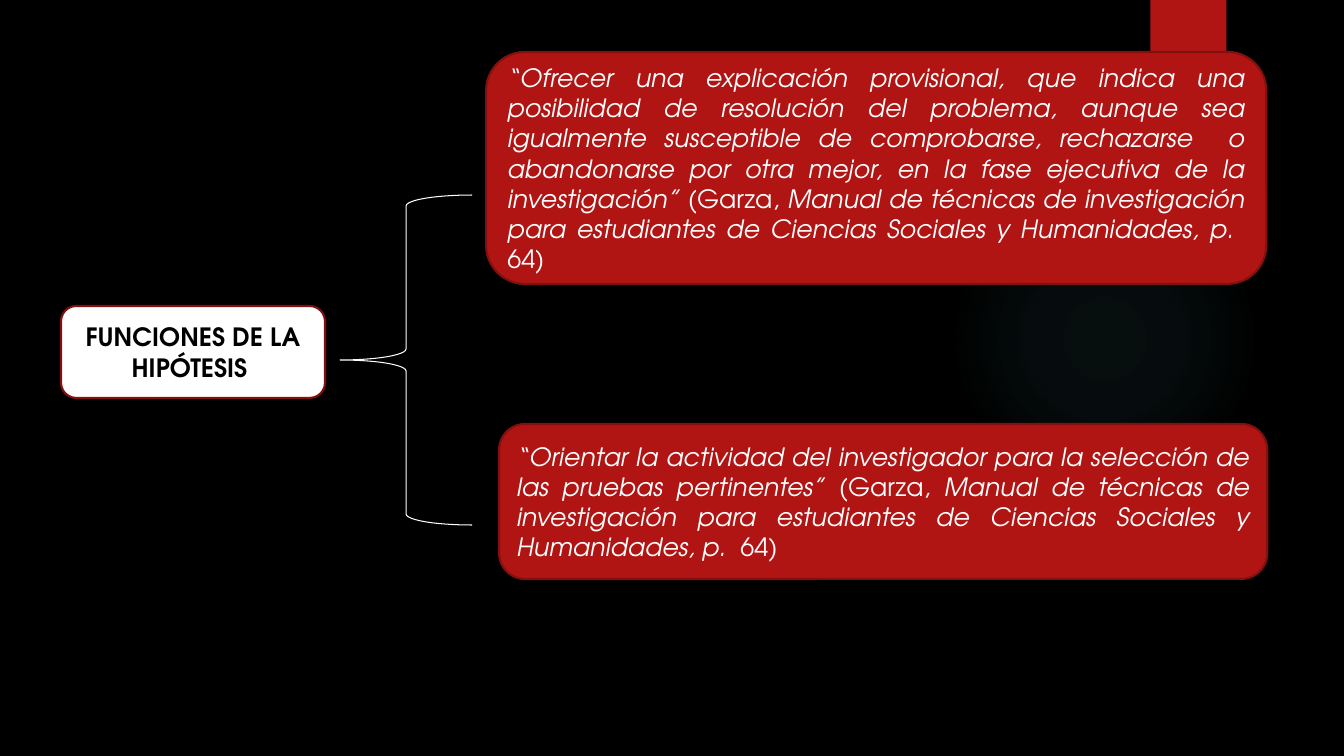
from lxml import etree
from pptx import Presentation
from pptx import util as u
from pptx.dml.color import RGBColor
from pptx.enum import shapes, text
from pptx.oxml import ns

PX = 914400 / 100.8
FONT = "TeX Gyre Adventor"
BLACK, WHITE, RED, DARK_RED, TEAL = "000000", "FFFFFF", "B01513", "82100E", "50B9C1"
KIND = shapes.MSO_SHAPE
ALIGN = text.PP_ALIGN

GLOW_BOX = (949, 184, 310, 310)
GLOW_STOPS = [(0, 7), (36, 6), (69, 0)]
TAB_BOX = (1150, 0, 76, 126)
BRACE_BOX = (340, 195, 132, 330)

MANUAL = "Manual de técnicas de investigación para estudiantes de Ciencias Sociales y Humanidades, p."
TOPIC = ((61, 306, 264, 92), [("FUNCIONES DE LA HIPÓTESIS ", False)])
FUNCTIONS = [
    ((486, 52, 780, 232), [
        ("“Ofrecer una explicación provisional, que indica una posibilidad de resolución del "
         "problema, aunque sea igualmente susceptible de comprobarse, rechazarse  o abandonarse "
         "por otra mejor, en la fase ejecutiva de la investigación” ", True),
        ("(Garza, ", False), (MANUAL, True), ("  64)", False)]),
    ((499, 424, 768, 155), [
        ("“Orientar la actividad del investigador para la selección de las pruebas "
         "pertinentes”", True),
        (" (Garza, ", False), (MANUAL, True), ("  64)", False)]),
]


def rgb(value):
    return RGBColor.from_string(value)


def add_shape(slide, kind, box, fill=None, line=None, width=1.5):
    sp = slide.shapes.add_shape(kind, *(u.Emu(round(v * PX)) for v in box))
    sp.shadow.inherit = False
    if fill:
        sp.fill.solid()
        sp.fill.fore_color.rgb = rgb(fill)
    else:
        sp.fill.background()
    if line:
        sp.line.color.rgb = rgb(line)
        sp.line.width = u.Pt(width)
    else:
        sp.line.fill.background()
    return sp


def add_card(slide, box, runs, fill, color, align, bold=False):
    sp = add_shape(slide, KIND.ROUNDED_RECTANGLE, box, fill, DARK_RED)
    tf = sp.text_frame
    tf.word_wrap = True
    tf.vertical_anchor = text.MSO_ANCHOR.MIDDLE
    p = tf.paragraphs[0]
    p.alignment = align
    for words, italic in runs:
        r = p.add_run()
        r.text = words
        r.font.name = FONT
        r.font.size = u.Pt(18)
        r.font.bold = bold
        r.font.italic = italic
        r.font.color.rgb = rgb(color)


def add_glow(slide):
    sp = add_shape(slide, KIND.OVAL, GLOW_BOX, TEAL)
    stops = "".join(
        f'<a:gs pos="{pos * 1000}"><a:srgbClr val="{TEAL}">'
        f'<a:alpha val="{alpha * 1000}"/></a:srgbClr></a:gs>'
        for pos, alpha in GLOW_STOPS)
    grad = etree.fromstring(
        f'<a:gradFill {ns.nsdecls("a")} rotWithShape="1"><a:gsLst>{stops}</a:gsLst>'
        '<a:path path="circle"><a:fillToRect l="50000" t="50000" r="50000" b="50000"/>'
        '</a:path></a:gradFill>')
    solid = sp._element.spPr.find(ns.qn("a:solidFill"))
    sp._element.spPr.replace(solid, grad)


def main():
    prs = Presentation()
    prs.slide_width, prs.slide_height = u.Inches(13.33), u.Inches(7.5)
    s = prs.slides.add_slide(prs.slide_layouts[6])
    s.background.fill.solid()
    s.background.fill.fore_color.rgb = rgb(BLACK)

    add_glow(s)
    add_shape(s, KIND.RECTANGLE, TAB_BOX, RED)
    add_card(s, *TOPIC, WHITE, BLACK, ALIGN.CENTER, bold=True)
    add_shape(s, KIND.LEFT_BRACE, BRACE_BOX, line=WHITE, width=0.75)
    for box, runs in FUNCTIONS:
        add_card(s, box, runs, RED, WHITE, ALIGN.JUSTIFY)
    prs.save("out.pptx")


if __name__ == "__main__":
    main()
